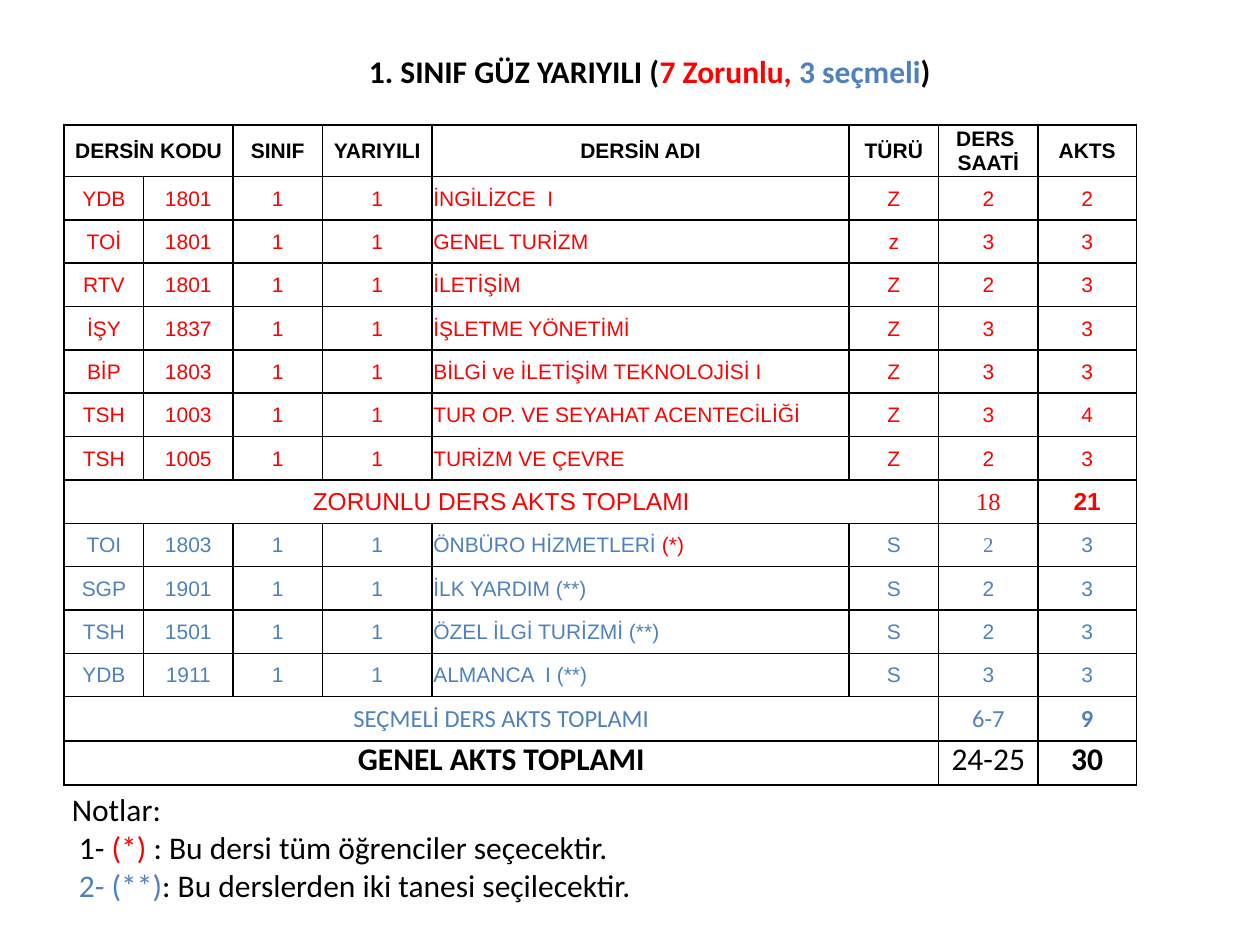
"""Build the first-year autumn term course table slide."""
from lxml import etree
from pptx import Presentation
from pptx import util as u
from pptx.dml.color import RGBColor
from pptx.enum import text
from pptx.oxml.ns import qn

BLACK, RED, BLUE = "000000", "FF0000", "4F81BD"
ARIAL, CALIBRI, TIMES = "Arial", "Calibri", "Times New Roman"
CENTER, LEFT = text.PP_ALIGN.CENTER, text.PP_ALIGN.LEFT
COLUMN_WIDTHS = [0.63, 0.71, 0.71, 0.87, 3.31, 0.71, 0.79, 0.78]
TABLE_HEIGHT, HEADER_HEIGHT = 5.23, 0.41
NAME_COLUMN, HOURS_COLUMN, CREDIT_COLUMN = 4, 6, 7

HEADERS = ["DERSİN KODU", "", "SINIF", "YARIYILI", "DERSİN ADI", "TÜRÜ", "DERS \nSAATİ", "AKTS"]
REQUIRED = [
    ("YDB", "1801", "İNGİLİZCE  I", "Z", "2", "2"),
    ("TOİ", "1801", "GENEL TURİZM", "z", "3", "3"),
    ("RTV", "1801", "İLETİŞİM", "Z", "2", "3"),
    ("İŞY", "1837", "İŞLETME YÖNETİMİ", "Z", "3", "3"),
    ("BİP", "1803", "BİLGİ ve İLETİŞİM TEKNOLOJİSİ I", "Z", "3", "3"),
    ("TSH", "1003", "TUR OP. VE SEYAHAT ACENTECİLİĞİ", "Z", "3", "4"),
    ("TSH", "1005", "TURİZM VE ÇEVRE", "Z", "2", "3"),
]
ELECTIVE = [
    ("TOI", "1803", "ÖNBÜRO HİZMETLERİ ", "S", "2", "3"),
    ("SGP", "1901", "İLK YARDIM (**)", "S", "2", "3"),
    ("TSH", "1501", "ÖZEL İLGİ TURİZMİ (**)", "S", "2", "3"),
    ("YDB", "1911", "ALMANCA  I (**)", "S", "3", "3"),
]


def color(value):
    """Turn a hex string into a colour."""
    return RGBColor.from_string(value)


def add_run(paragraph, words, hue=BLACK, size=12, font=ARIAL, bold=False):
    """Append one formatted run to a paragraph."""
    run = paragraph.add_run()
    run.text = words
    run.font.size, run.font.name, run.font.bold = u.Pt(size), font, bold
    run.font.color.rgb = color(hue)


def place(shape, left, top, width, height):
    """Move and size a shape in inches."""
    shape.left, shape.top = u.Inches(left), u.Inches(top)
    shape.width, shape.height = u.Inches(width), u.Inches(height)


def add_borders(cell):
    """Draw a thin black line on all four sides of a cell."""
    properties = cell._tc.get_or_add_tcPr()
    for side in ("a:lnL", "a:lnR", "a:lnT", "a:lnB"):
        line = etree.SubElement(properties, qn(side), w=str(u.Pt(1)))
        fill = etree.SubElement(line, qn("a:solidFill"))
        etree.SubElement(fill, qn("a:srgbClr"), val=BLACK)


def fill_cell(cell, words, align=CENTER, **style):
    """Write tightly set, vertically centred text into a cell."""
    cell.vertical_anchor = text.MSO_ANCHOR.MIDDLE
    cell.margin_left = cell.margin_right = cell.margin_top = u.Inches(0.01)
    cell.margin_bottom = 0
    for index, line in enumerate(words.split("\n")):
        frame = cell.text_frame
        paragraph = frame.add_paragraph() if index else frame.paragraphs[0]
        paragraph.alignment = align
        add_run(paragraph, line, **style)


def fill_sum_cell(cell, words, **style):
    """Write top-anchored text with fixed line spacing into a cell."""
    cell.margin_left = cell.margin_right = u.Inches(0.05)
    paragraph = cell.text_frame.paragraphs[0]
    paragraph.alignment, paragraph.line_spacing = CENTER, u.Pt(18)
    add_run(paragraph, words, font=CALIBRI, **style)


def fill_courses(table, first_row, courses, hue):
    """Write one row per course; class and term are always 1."""
    for row, (code, number, *details) in enumerate(courses, first_row):
        for column, words in enumerate((code, number, "1", "1", *details)):
            align = LEFT if column == NAME_COLUMN else CENTER
            fill_cell(table.cell(row, column), words, align, hue=hue)


def merge_label(table, row):
    """Merge the label cells of a total row and return the result."""
    label = table.cell(row, 0)
    label.merge(table.cell(row, HOURS_COLUMN - 1))
    return label


def add_sum_row(table, row, words, **style):
    """Write a total row: label, hours and credits."""
    label, hours, credits, label_bold = words
    fill_sum_cell(merge_label(table, row), label, bold=label_bold, **style)
    fill_sum_cell(table.cell(row, HOURS_COLUMN), hours, **style)
    fill_sum_cell(table.cell(row, CREDIT_COLUMN), credits, bold=True, **style)


def add_course_table(slide):
    """Add the course table with both totals and the grand total."""
    required_total = len(REQUIRED) + 1
    elective_start = required_total + 1
    elective_total = elective_start + len(ELECTIVE)
    row_count = elective_total + 2
    frame = slide.shapes.add_table(
        row_count, len(COLUMN_WIDTHS), u.Inches(0.51), u.Inches(0.99),
        u.Inches(sum(COLUMN_WIDTHS)), u.Inches(TABLE_HEIGHT))
    table = frame.table
    table.first_row = table.horz_banding = False
    for column, width in zip(table.columns, COLUMN_WIDTHS):
        column.width = u.Inches(width)
    for row in table.rows:
        row.height = u.Inches((TABLE_HEIGHT - HEADER_HEIGHT) / (row_count - 1))
    table.rows[0].height = u.Inches(HEADER_HEIGHT)
    for cell in table.iter_cells():
        add_borders(cell)
        cell.fill.background()

    table.cell(0, 0).merge(table.cell(0, 1))
    for column, words in enumerate(HEADERS):
        if words:
            fill_cell(table.cell(0, column), words, bold=True)
    fill_courses(table, 1, REQUIRED, RED)
    fill_cell(merge_label(table, required_total), "ZORUNLU DERS AKTS TOPLAMI", hue=RED, size=14)
    fill_cell(table.cell(required_total, HOURS_COLUMN), "18", hue=RED, size=14, font=TIMES)
    fill_cell(table.cell(required_total, CREDIT_COLUMN), "21", hue=RED, size=14, bold=True)
    fill_courses(table, elective_start, ELECTIVE, BLUE)
    front_office = table.cell(elective_start, NAME_COLUMN).text_frame.paragraphs[0]
    add_run(front_office, "(*)", RED)
    hours = table.cell(elective_start, HOURS_COLUMN).text_frame.paragraphs[0]
    hours.runs[0].font.name = TIMES
    add_sum_row(table, elective_total, ("SEÇMELİ DERS AKTS TOPLAMI", "6-7", "9", False),
                hue=BLUE, size=14)
    add_sum_row(table, elective_total + 1, ("GENEL AKTS TOPLAMI", "24-25", "30", True), size=18)


def add_title(slide):
    """Write the three-coloured heading in the title placeholder."""
    title = slide.shapes.title
    place(title, 1.85, 0.36, 6.67, 0.4)
    title.text_frame.auto_size = text.MSO_AUTO_SIZE.NONE
    paragraph = title.text_frame.paragraphs[0]
    paragraph.alignment = CENTER
    for words, hue in (("1. SINIF GÜZ YARIYILI (", BLACK), ("7 Zorunlu, ", RED),
                       ("3 seçmeli", BLUE), (") ", BLACK)):
        add_run(paragraph, words, hue, 18, CALIBRI, True)


def add_notes(slide):
    """Write the unbulleted footnotes in the body placeholder."""
    notes = slide.placeholders[1]
    place(notes, 0.47, 6.22, 4.69, 1.01)
    frame = notes.text_frame
    frame.word_wrap, frame.auto_size = False, text.MSO_AUTO_SIZE.NONE
    lines = [
        [("Notlar:", BLACK)],
        [(" 1- ", BLACK), ("(*)", RED), (" : Bu dersi tüm öğrenciler seçecektir.", BLACK)],
        [(" 2- (**)", BLUE), (": Bu derslerden iki tanesi seçilecektir.", BLACK)],
    ]
    for index, line in enumerate(lines):
        paragraph = frame.add_paragraph() if index else frame.paragraphs[0]
        paragraph.space_before = u.Pt(0)
        properties = paragraph._p.get_or_add_pPr()
        properties.set("marL", "0")
        properties.set("indent", "0")
        etree.SubElement(properties, qn("a:buNone"))
        for words, hue in line:
            add_run(paragraph, words, hue, 18, CALIBRI)


def main():
    """Create and save the presentation."""
    presentation = Presentation()
    presentation.slide_width, presentation.slide_height = u.Inches(10), u.Inches(7.5)
    slide = presentation.slides.add_slide(presentation.slide_layouts[1])
    add_title(slide)
    add_course_table(slide)
    add_notes(slide)
    presentation.save("out.pptx")


if __name__ == "__main__":
    main()
